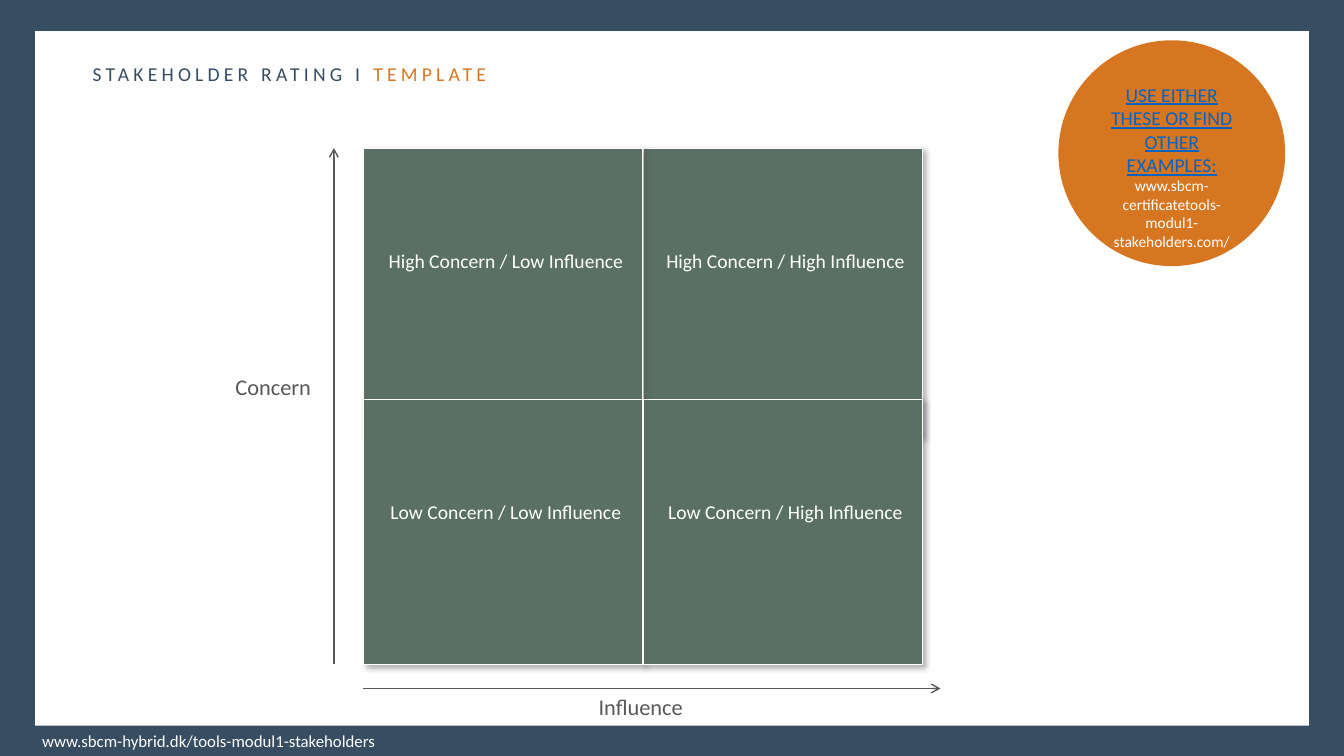
from pptx import Presentation
from pptx.dml.color import RGBColor
from pptx.enum.shapes import MSO_CONNECTOR, MSO_SHAPE
from pptx.enum.text import MSO_ANCHOR, PP_ALIGN
from pptx.oxml import parse_xml
from pptx.oxml.ns import nsdecls
from pptx.util import Pt

NAVY = RGBColor(0x37, 0x4D, 0x62)
ORANGE = RGBColor(0xD7, 0x76, 0x21)
GREEN = RGBColor(0x5B, 0x70, 0x65)
GREY = RGBColor(0x58, 0x58, 0x5A)
BLUE = RGBColor(0x05, 0x63, 0xC1)
WHITE = RGBColor(0xFF, 0xFF, 0xFF)

RECT, OVAL = MSO_SHAPE.RECTANGLE, MSO_SHAPE.OVAL
LINE = MSO_CONNECTOR.STRAIGHT
TOP, MID = MSO_ANCHOR.TOP, MSO_ANCHOR.MIDDLE
LEFT, CENTER = PP_ALIGN.LEFT, PP_ALIGN.CENTER


class Board:
    font = "Calibri"

    def __init__(self, slide):
        self.slide = slide

    def style(self, run, size, color):
        run.font.name = self.font
        run.font.size = Pt(size)
        run.font.color.rgb = color

    def back(self, color):
        fill = self.slide.background.fill
        fill.solid()
        fill.fore_color.rgb = color

    def shape(self, kind, box, color, edge=None):
        item = self.slide.shapes.add_shape(kind, *map(Pt, box))
        item.shadow.inherit = False
        item.fill.solid()
        item.fill.fore_color.rgb = color
        if edge is None:
            item.line.fill.background()
        else:
            item.line.color.rgb = edge
            item.line.width = Pt(0.75)
        return item

    def words(self, item, lines, pads, anchor=TOP, align=CENTER, wrap=True):
        """Fill item with one paragraph per (text, size, color) line."""
        frame = item.text_frame
        frame.word_wrap = wrap
        frame.vertical_anchor = anchor
        (frame.margin_left, frame.margin_top,
         frame.margin_right, frame.margin_bottom) = map(Pt, pads)
        frame.text = "\n".join(text for text, _, _ in lines)
        for para, (_, size, color) in zip(frame.paragraphs, lines):
            para.alignment = align
            self.style(para.runs[0], size, color)

    def label(self, box, text, size, color, align=LEFT, wrap=True):
        item = self.slide.shapes.add_textbox(*map(Pt, box))
        self.words(item, [(text, size, color)],
                   (7.2, 3.6, 7.2, 3.6), TOP, align, wrap)
        return item

    def shade(self, item):
        item.element.spPr.find("{*}effectLst").append(parse_xml(
            f'<a:outerShdw {nsdecls("a")} blurRad="50800" dist="38100" '
            'dir="2700000" algn="tl" rotWithShape="0">'
            f'<a:srgbClr val="{GREY}"><a:alpha val="43000"/></a:srgbClr>'
            '</a:outerShdw>'))

    def arrow(self, x1, y1, x2, y2):
        item = self.slide.shapes.add_connector(LINE, *map(Pt, (x1, y1, x2, y2)))
        item.line.color.rgb = GREY
        item.line.width = Pt(1)
        props = item.element.spPr
        props.find("{*}ln").append(
            parse_xml(f'<a:tailEnd {nsdecls("a")} type="arrow"/>'))
        props.append(parse_xml(f'<a:effectLst {nsdecls("a")}/>'))


def main():
    deck = Presentation()
    deck.slide_width, deck.slide_height = Pt(960), Pt(540)
    board = Board(deck.slides.add_slide(deck.slide_layouts[6]))

    # Frame and footer
    board.back(NAVY)
    board.shape(RECT, (25, 22.3, 910, 496), WHITE)
    board.label((23, 518.4, 480, 21.6),
                "www.sbcm-hybrid.dk/tools-modul1-stakeholders", 12, WHITE)

    # Badge
    badge = board.shape(OVAL, (756, 28.8, 162, 161.3), ORANGE)
    board.words(badge, [
        ("USE EITHER THESE OR FIND OTHER EXAMPLES:", 14, BLUE),
        ("www.sbcm-certificatetools-modul1-stakeholders.com/", 11, WHITE),
    ], (7.2, 19, 7.2, 0), MID)
    badge.text_frame.paragraphs[0].runs[0].font.underline = True

    # Axis names
    board.label((420.5, 491.8, 75.6, 26.6), "Influence", 16, GREY, wrap=False)
    board.label((160.6, 262.8, 69.1, 26.6), "Concern", 16, GREY, CENTER, False)

    # Rating grid: the lower row overlaps the upper one
    left, wide = 259.6, 199.7
    rows = {"High": (105.8, 205.9), "Low": (285.1, 189.4)}
    cells = [("High", "High"), ("High", "Low"), ("Low", "Low"), ("Low", "High")]
    for concern, power in cells:
        top, high = rows[concern]
        x = left + wide * (power == "High")
        cell = board.shape(RECT, (x, top, wide, high), GREEN, WHITE)
        board.shade(cell)
        text = f"{concern} Concern / {power} Influence"
        board.words(cell, [(text, 14, WHITE)], (11, 72, 7.2, 3.6))

    # Axes
    board.arrow(238.5, 474, 238.5, 105.8)
    board.arrow(259.2, 491.8, 671.8, 491.8)

    # Title
    title = board.label((59, 41, 810, 24.5), "STAKEHOLDER RATING I ", 14, NAVY)
    word = title.text_frame.paragraphs[0].add_run()
    word.text = "TEMPLATE"
    board.style(word, 14, ORANGE)
    for props in title.element.iter("{*}rPr"):
        props.set("spc", "300")

    deck.save("out.pptx")


if __name__ == "__main__":
    main()
